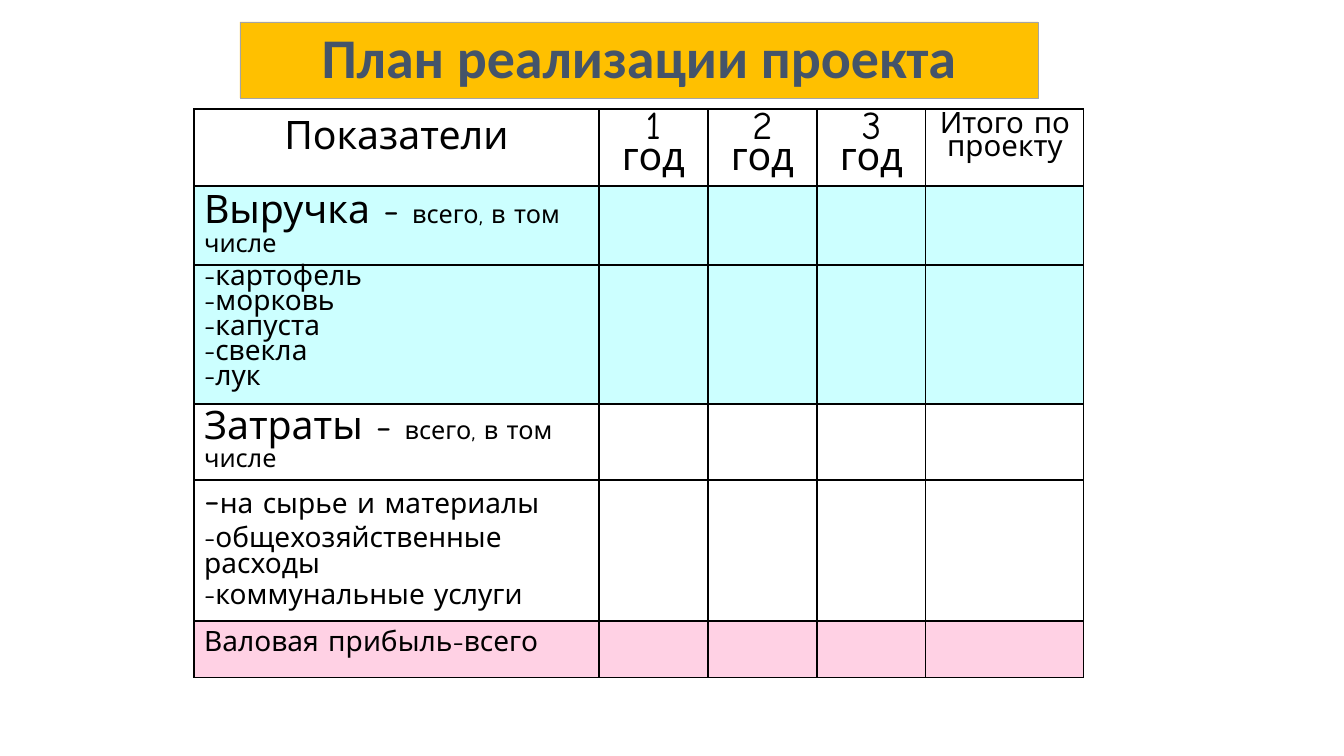
from dataclasses import dataclass
from typing import Any

from lxml.etree import SubElement
from pptx import Presentation
from pptx.dml.color import RGBColor
from pptx.enum.shapes import MSO_SHAPE
from pptx.enum.text import MSO_ANCHOR, PP_ALIGN
from pptx.oxml import parse_xml
from pptx.oxml.ns import nsdecls, qn
from pptx.slide import Slide
from pptx.table import _Cell
from pptx.util import Emu, Pt

BLACK = RGBColor(0x00, 0x00, 0x00)
WHITE = RGBColor(0xFF, 0xFF, 0xFF)
AQUA = RGBColor(0xCC, 0xFF, 0xFF)
PINK = RGBColor(0xFF, 0xD1, 0xE4)
AMBER = RGBColor(0xFF, 0xC0, 0x00)
GRAY = RGBColor(0xA5, 0xA5, 0xA5)
SLATE = RGBColor(0x44, 0x54, 0x6A)

TABLE_FONT = "Comic Neue"
COLUMN_WIDTHS = (405, 109, 109, 109, 158)
BORDER_SIDES = ("lnL", "lnR", "lnT", "lnB")


@dataclass(frozen=True)
class TextRun:
    """A piece of text with its size in points."""

    text: str
    size: int


@dataclass(frozen=True)
class CellText:
    """Paragraphs of runs that share alignment and line spacing."""

    paragraphs: tuple[tuple[TextRun, ...], ...]
    line_spacing: float = 1.0
    alignment: PP_ALIGN = PP_ALIGN.LEFT


@dataclass(frozen=True)
class PlanRow:
    """A table row: height in px, fill and the texts of its leading cells."""

    height: int
    fill: RGBColor
    cells: tuple[CellText, ...]


def heading(text: str, size: int = 28, line_spacing: float = 0.7) -> CellText:
    """Describe a centred column heading."""
    return CellText(((TextRun(text, size),),), line_spacing, PP_ALIGN.CENTER)


def total(text: str, line_spacing: float) -> CellText:
    """Describe a total with its small remark."""
    runs = (TextRun(f"{text} - ", 28), TextRun("всего, в том числе", 18))
    return CellText((runs,), line_spacing)


CROPS = ("-картофель", "-морковь", "-капуста", "-свекла", "-лук")
COSTS = (
    (TextRun("-", 28), TextRun("на сырье и материалы", 20)),
    (TextRun("-общехозяйственные расходы", 20),),
    (TextRun("-коммунальные услуги", 20),),
)
ROWS = (
    PlanRow(77, WHITE, (
        heading("Показатели", line_spacing=1.0),
        *(heading(f"{year} год") for year in (1, 2, 3)),
        heading("Итого по проекту", 21),
    )),
    PlanRow(79, AQUA, (total("Выручка", 0.9),)),
    PlanRow(139, AQUA, (CellText(tuple((TextRun(crop, 20),) for crop in CROPS), 0.6),)),
    PlanRow(76, WHITE, (total("Затраты", 0.85),)),
    PlanRow(141, WHITE, (CellText(COSTS, 0.8),)),
    PlanRow(57, PINK, (CellText(((TextRun("Валовая прибыль-всего", 20),),)),)),
)


def px(length: int) -> Emu:
    """Turn px into EMU."""
    return Emu(round(length * 914400 / 100.8))


def apply_format(target: Any, values: dict[str, Any]) -> None:
    """Set each named attribute on the target."""
    for name, value in values.items():
        setattr(target, name, value)


def add_run(paragraph: Any, text: str, color: RGBColor, values: dict[str, Any]) -> None:
    """Append a formatted run to a paragraph."""
    run = paragraph.add_run()
    run.text = text
    apply_format(run.font, values)
    run.font.color.rgb = color


def draw_borders(cell: _Cell) -> None:
    """Give a cell thin black borders on all sides."""
    properties = cell._tc.get_or_add_tcPr()
    for index, side in enumerate(BORDER_SIDES):
        border = parse_xml(
            f'<a:{side} {nsdecls("a")} w="{Pt(1)}"><a:solidFill>'
            f'<a:srgbClr val="{BLACK}"/></a:solidFill></a:{side}>'
        )
        properties.insert(index, border)


def write_cell(cell: _Cell, content: CellText) -> None:
    """Write the paragraphs of one cell."""
    frame = cell.text_frame
    for index, runs in enumerate(content.paragraphs):
        paragraph = frame.add_paragraph() if index else frame.paragraphs[0]
        apply_format(paragraph, {
            "alignment": content.alignment,
            "line_spacing": content.line_spacing,
        })
        if index:
            spacing = SubElement(paragraph._p.get_or_add_pPr(), qn("a:spcBef"))
            SubElement(spacing, qn("a:spcPct")).set("val", "20000")
        for run in runs:
            add_run(paragraph, run.text, BLACK, {"name": TABLE_FONT, "size": Pt(run.size)})


def draw_table(slide: Slide) -> None:
    """Draw the plan table."""
    height = sum(row.height for row in ROWS)
    table = slide.shapes.add_table(
        len(ROWS), len(COLUMN_WIDTHS),
        px(194), px(109), px(sum(COLUMN_WIDTHS)), px(height),
    ).table
    apply_format(table, {"first_row": False, "horz_banding": False})
    for column, width in zip(table.columns, COLUMN_WIDTHS):
        column.width = px(width)
    for table_row, row in zip(table.rows, ROWS):
        table_row.height = px(row.height)
        for cell in table_row.cells:
            cell.fill.solid()
            cell.fill.fore_color.rgb = row.fill
            draw_borders(cell)
        for cell, content in zip(table_row.cells, row.cells):
            write_cell(cell, content)


def draw_title(slide: Slide) -> None:
    """Draw the title banner."""
    shape = slide.shapes.add_shape(MSO_SHAPE.RECTANGLE, px(240), px(22), px(798), px(76))
    shape.shadow.inherit = False
    shape.fill.solid()
    shape.fill.fore_color.rgb = AMBER
    shape.line.color.rgb = GRAY
    shape.line.width = Pt(0.5)
    apply_format(shape.text_frame, {"word_wrap": True, "vertical_anchor": MSO_ANCHOR.MIDDLE})
    paragraph = shape.text_frame.paragraphs[0]
    apply_format(paragraph, {"alignment": PP_ALIGN.CENTER, "line_spacing": 0.9})
    add_run(paragraph, "План реализации проекта", SLATE,
            {"name": "Calibri", "size": Pt(40), "bold": True})


def main() -> None:
    """Build and save the slide."""
    presentation = Presentation()
    apply_format(presentation, {"slide_width": px(1344), "slide_height": px(756)})
    slide = presentation.slides.add_slide(presentation.slide_layouts[6])
    draw_table(slide)
    draw_title(slide)
    presentation.save("out.pptx")


if __name__ == "__main__":
    main()
